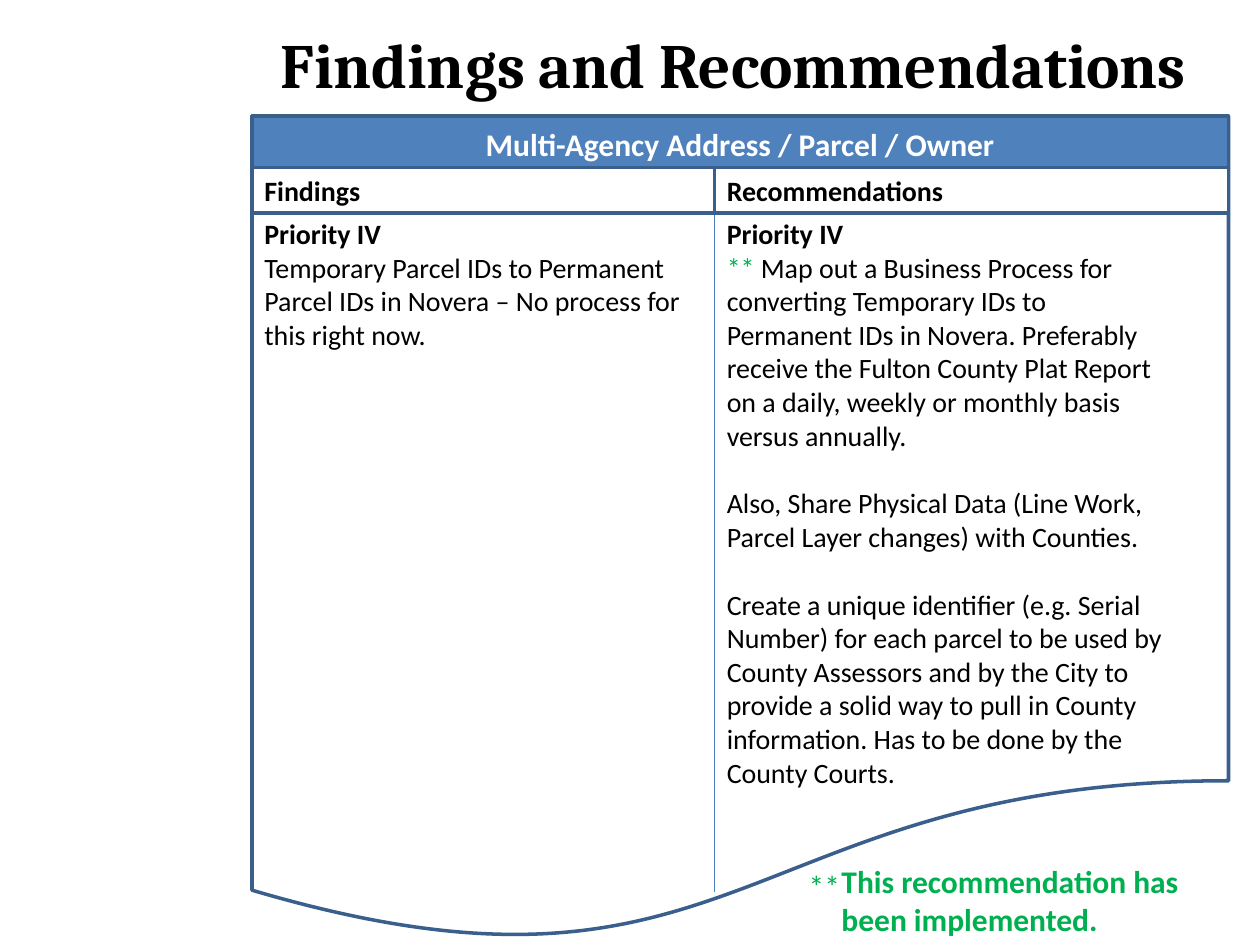
import pptx
import pptx.util
import pptx.dml.color
import pptx.enum.shapes
import pptx.enum.text
import pptx.oxml.ns
import lxml.etree

Inches, Pt = pptx.util.Inches, pptx.util.Pt
SHAPE = pptx.enum.shapes.MSO_SHAPE
ALIGN = pptx.enum.text.PP_ALIGN
ANCHOR = pptx.enum.text.MSO_ANCHOR
BLUE, EDGE, RULE = "4F81BD", "3A5F8C", "4B7EBC"
WHITE, BLACK, GREEN = "FFFFFF", "000000", "00B050"
BLANK_LINE = 19.5  # height of one 16 pt line, in points


def rgb(value):
    return pptx.dml.color.RGBColor.from_string(value)


def add_run(p, text, size=16, color=BLACK, bold=False, font="Calibri"):
    r = p.add_run()
    r.text = text
    r.font.size, r.font.bold, r.font.name = Pt(size), bold, font
    r.font.color.rgb = rgb(color)


def add_panel(s, kind, x, y, w, h, fill=WHITE):
    sp = s.shapes.add_shape(kind, Inches(x), Inches(y), Inches(w), Inches(h))
    sp.shadow.inherit = False
    sp.fill.solid()
    sp.fill.fore_color.rgb = rgb(fill)
    sp.line.color.rgb = rgb(EDGE)
    sp.line.width = Pt(2)
    return sp


def add_header(s, x, y, w, h, text, size=16, fill=WHITE, color=BLACK, align=ALIGN.LEFT):
    tf = add_panel(s, SHAPE.RECTANGLE, x, y, w, h, fill).text_frame
    tf.vertical_anchor = ANCHOR.MIDDLE
    p = tf.paragraphs[0]
    p.alignment = align
    add_run(p, text, size, color, bold=True)


def add_text(s, x, y, w, h, paragraphs, gap=0, wrap=True):
    """Each paragraph is a list of (text, run options); gap precedes the third and later ones."""
    tf = s.shapes.add_textbox(Inches(x), Inches(y), Inches(w), Inches(h)).text_frame
    tf.word_wrap = wrap
    for i, runs in enumerate(paragraphs):
        p = tf.add_paragraph() if i else tf.paragraphs[0]
        if gap and i > 1:
            p.space_before = Pt(gap)
        for text, options in runs:
            add_run(p, text, **options)
    return tf


def add_title(s, x, y, w, h):
    style = {"size": 36, "bold": True, "font": "Cambria"}
    tf = add_text(s, x, y, w, h, [[("Findings and Recommendations ", style)]])
    tf.vertical_anchor = ANCHOR.MIDDLE
    tf.paragraphs[0].alignment = ALIGN.CENTER


def add_divider(s, x, top, bottom):
    c = s.shapes.add_connector(pptx.enum.shapes.MSO_CONNECTOR.STRAIGHT,
                               Inches(x), Inches(top), Inches(x), Inches(bottom))
    c.line.color.rgb = rgb(RULE)
    c.line.width = Pt(0.75)
    lxml.etree.SubElement(c._element.spPr, pptx.oxml.ns.qn("a:effectLst"))


def add_document(s, x, y, w, h):
    split, head, body = x + 3.67, y + 0.41, y + 0.75
    # Page outline, banner and column headers
    add_panel(s, SHAPE.FLOWCHART_DOCUMENT, x, y, w, h)
    add_header(s, x, y, w, 0.45, "Multi-Agency Address / Parcel / Owner",
               18, BLUE, WHITE, ALIGN.CENTER)
    add_header(s, x, head, 3.92, 0.36, "Findings")
    add_divider(s, split, head, 7.08)
    add_header(s, split, head, x + w - split, 0.36, "Recommendations")

    # Column text
    priority = [("Priority IV", {"bold": True})]
    add_text(s, x, body, 3.67, 1.75, [
        priority,
        [("Temporary Parcel IDs to Permanent Parcel IDs in Novera – "
          "No process for this right now.", {})],
    ])
    add_text(s, split, body, 3.67, 5.28, [
        priority,
        [("** ", {"color": GREEN}),
         ("Map out a Business Process for converting Temporary IDs to Permanent IDs "
          "in Novera. Preferably receive the Fulton County Plat Report on a daily, "
          "weekly or monthly basis versus annually.", {})],
        [("Also, Share Physical Data (Line Work, Parcel Layer changes) with Counties.", {})],
        [("Create a unique identifier (e.g. Serial Number) for each parcel to be used by "
          "County Assessors and by the City to provide a solid way to pull in County "
          "information. Has to be done by the County Courts.", {})],
    ], gap=BLANK_LINE)


def add_footnote(s, x, y, w, h):
    mark = {"size": 18, "color": GREEN}
    note = {**mark, "bold": True}
    add_text(s, x, y + 0.04, 0.51, 0.4, [[("**", mark)]], wrap=False)
    add_text(s, x + 0.26, y, w - 0.26, h, [
        [("This recommendation has", note)],
        [("been implemented.", note)],
    ], wrap=False)


def main():
    prs = pptx.Presentation()
    prs.slide_width, prs.slide_height = Inches(10), Inches(7.5)
    s = prs.slides.add_slide(prs.slide_layouts[6])
    add_document(s, 2, 0.92, 7.75, 6.58)
    add_title(s, 1.54, 0.17, 8.67, 0.67)
    add_footnote(s, 6.32, 6.79, 3.21, 0.71)
    prs.save("out.pptx")


if __name__ == "__main__":
    main()
